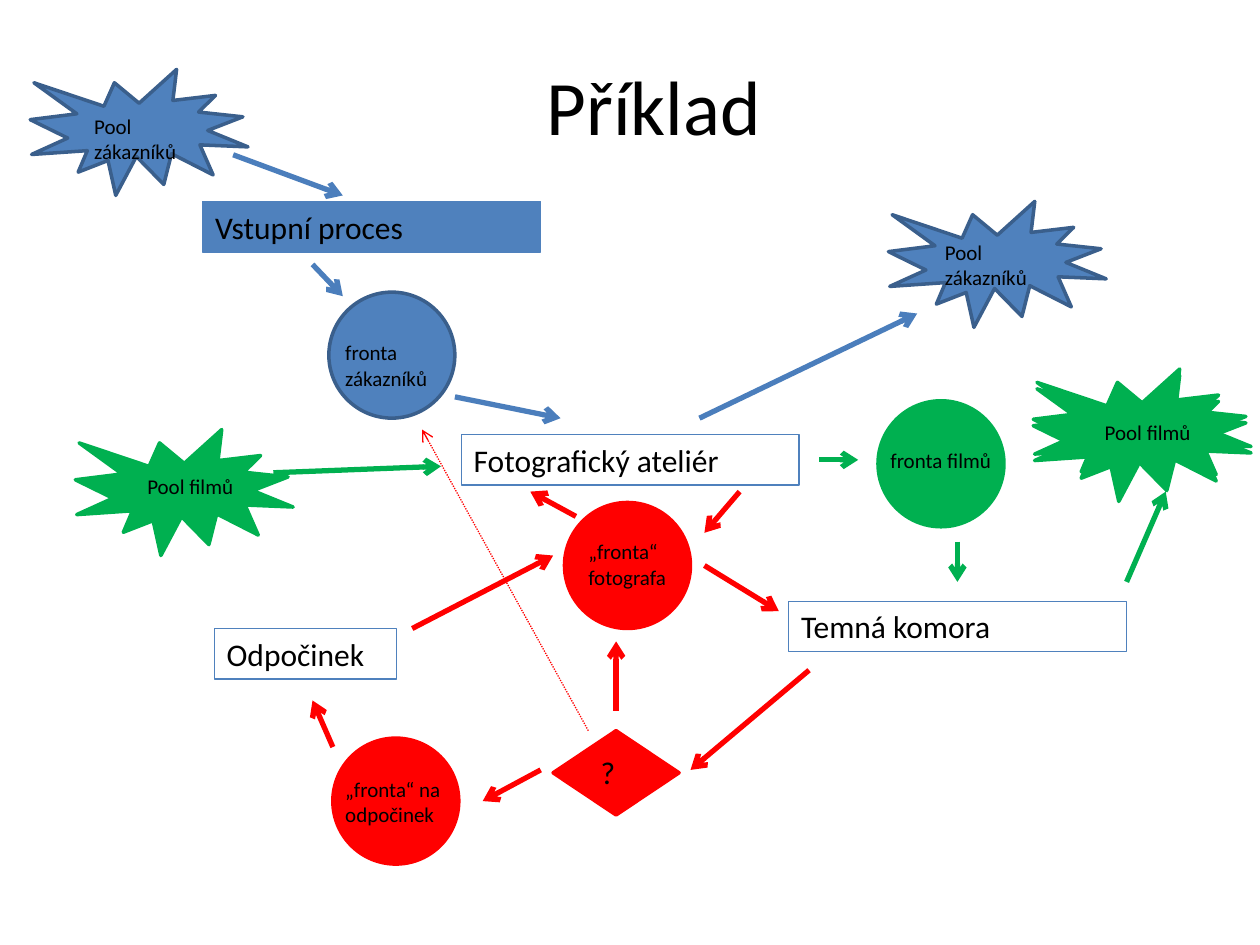
import pptx
import pptx.dml.color
import pptx.enum.dml
import pptx.enum.shapes
import pptx.enum.text
import pptx.oxml
import pptx.oxml.ns
import pptx.util

Cm, Pt = pptx.util.Cm, pptx.util.Pt
KIND = pptx.enum.shapes.MSO_SHAPE

THEME = {
    "font": "Calibri", "text": "000000",
    "title": 44, "process": 18, "label": 12,
    "blue": "4F81BD", "blue edge": "3A5F8C", "blue arrow": "4B7EBC",
    "green": "00B050", "red": "FF0000",
    "thin": 0.75, "edge": 2, "arrow": 3,
}

# Content: lengths in centimetres
TITLE = ("Příklad", 1.75, 0.53, 22.86, 3.18)

# Symbols: size by kind, then left, top, fill, edge
SIZES = {
    KIND.EXPLOSION1: (4.39, 2.54),
    KIND.OVAL: (2.54, 2.54),
    KIND.FLOWCHART_DECISION: (2.54, 1.7),
}
SYMBOLS = [
    (KIND.EXPLOSION1, 20.83, 7.44, "green", "green"),
    (KIND.EXPLOSION1, 20.83, 7.57, "green", "green"),
    (KIND.EXPLOSION1, 17.91, 4.06, "blue", "blue edge"),
    (KIND.EXPLOSION1, 0.61, 1.4, "blue", "blue edge"),
    (KIND.EXPLOSION1, 1.52, 8.66, "green", "green"),
    (KIND.OVAL, 6.63, 5.89, "blue", "blue edge"),
    (KIND.OVAL, 11.38, 10.13, "red", "red"),
    (KIND.OVAL, 17.7, 8.08, "green", "green"),
    (KIND.OVAL, 6.71, 14.88, "red", "red"),
    (KIND.FLOWCHART_DECISION, 11.15, 14.73, "red", "red"),
]

# Processes: text, left, top, width, fill
PROCESS_HEIGHT = 1.02
PROCESSES = [
    ("Vstupní proces", 4.09, 4.06, 6.81, "blue"),
    ("Fotografický ateliér", 9.3, 8.76, 6.81, None),
    ("Temná komora", 15.9, 12.12, 6.81, None),
    ("Odpočinek", 4.32, 12.67, 3.68, None),
]

# Labels: text, left, top, width, height, size
ONE_LINE, TWO_LINES = (2.59, 0.77, "label"), (2.59, 1.28, "label")
LABELS = [
    ("Pool zákazníků", 1.65, 2.16, *TWO_LINES),
    ("Pool zákazníků", 18.8, 4.7, *TWO_LINES),
    ("fronta zákazníků", 6.71, 6.73, *TWO_LINES),
    ("„fronta“ fotografa", 11.61, 10.74, *TWO_LINES),
    ("„fronta“ na odpočinek", 6.71, 15.52, *TWO_LINES),
    ("fronta filmů", 17.7, 8.89, *ONE_LINE),
    ("Pool filmů", 2.72, 9.42, *ONE_LINE),
    ("Pool filmů", 22.02, 8.33, *ONE_LINE),
    ("?", 11.86, 15.06, 1.7, 1.02, "process"),
]

# Arrows by colour: start x, start y, end x, end y
ARROWS = {
    "blue arrow": [
        (4.7, 3.12, 6.91, 3.94), (6.3, 5.33, 6.91, 5.97),
        (9.17, 8, 11.3, 8.43), (14.1, 8.43, 18.49, 6.32),
    ],
    "green": [
        (5.51, 9.53, 8.89, 9.4), (16.51, 9.27, 17.3, 9.27),
        (19.3, 10.92, 19.3, 11.73), (22.71, 11.73, 23.5, 9.91),
    ],
    "red": [
        (11.61, 10.41, 10.69, 9.91), (14.91, 9.91, 14.2, 10.74),
        (14.2, 11.4, 15.7, 12.32), (16.31, 13.51, 13.92, 15.52),
        (12.42, 14.33, 12.42, 12.93), (10.9, 15.52, 9.73, 16.15),
        (8.31, 12.67, 11.15, 11.2), (6.71, 15.06, 6.3, 14.12),
    ],
}
DOTTED_ARROW = (11.86, 14.73, 8.51, 8.66)


def color(name):
    return pptx.dml.color.RGBColor.from_string(THEME[name])


def write(box, text, size):
    frame = box.text_frame
    frame.word_wrap = True
    frame.vertical_anchor = pptx.enum.text.MSO_ANCHOR.TOP
    para = frame.paragraphs[0]
    para.text = text
    para.alignment = pptx.enum.text.PP_ALIGN.LEFT
    para.font.name = THEME["font"]
    para.font.size = Pt(THEME[size])
    para.font.color.rgb = color("text")
    return para


def add_text(page, text, left, top, width, height, size):
    box = page.shapes.add_textbox(Cm(left), Cm(top), Cm(width), Cm(height))
    return box, write(box, text, size)


def add_symbol(page, kind, left, top, width, height, fill, edge, weight):
    shape = page.shapes.add_shape(kind, Cm(left), Cm(top), Cm(width), Cm(height))
    shape.shadow.inherit = False
    if fill:
        shape.fill.solid()
        shape.fill.fore_color.rgb = color(fill)
    else:
        shape.fill.background()
    shape.line.color.rgb = color(edge)
    shape.line.width = Pt(THEME[weight])
    return shape


def add_arrow(page, ends, tint, weight, dash=None):
    arrow = page.shapes.add_connector(
        pptx.enum.shapes.MSO_CONNECTOR.STRAIGHT, *map(Cm, ends))
    arrow.line.color.rgb = color(tint)
    arrow.line.width = Pt(THEME[weight])
    if dash:
        arrow.line.dash_style = dash
    head = pptx.oxml.parse_xml(
        f'<a:tailEnd {pptx.oxml.ns.nsdecls("a")} type="arrow"/>')
    arrow.line._get_or_add_ln().append(head)
    arrow._element.spPr.append(
        pptx.oxml.parse_xml(f'<a:effectLst {pptx.oxml.ns.nsdecls("a")}/>'))


def main():
    deck = pptx.Presentation()
    deck.slide_width, deck.slide_height = Cm(25.4), Cm(19.05)
    page = deck.slides.add_slide(deck.slide_layouts[6])

    # Title
    box, para = add_text(page, *TITLE, "title")
    box.text_frame.vertical_anchor = pptx.enum.text.MSO_ANCHOR.MIDDLE
    para.alignment = pptx.enum.text.PP_ALIGN.CENTER

    # Flows
    for tint, flows in ARROWS.items():
        for ends in flows:
            add_arrow(page, ends, tint, "arrow")
    add_arrow(page, DOTTED_ARROW, "red", "thin",
              pptx.enum.dml.MSO_LINE.ROUND_DOT)

    # Pools, queues and the decision
    for kind, left, top, fill, edge in SYMBOLS:
        add_symbol(page, kind, left, top, *SIZES[kind], fill, edge, "edge")

    # Processes
    for text, left, top, width, fill in PROCESSES:
        box = add_symbol(page, KIND.RECTANGLE, left, top, width,
                         PROCESS_HEIGHT, fill, "blue", "thin")
        write(box, text, "process")

    # Labels over the symbols
    for label in LABELS:
        add_text(page, *label)

    deck.save("out.pptx")


if __name__ == "__main__":
    main()
